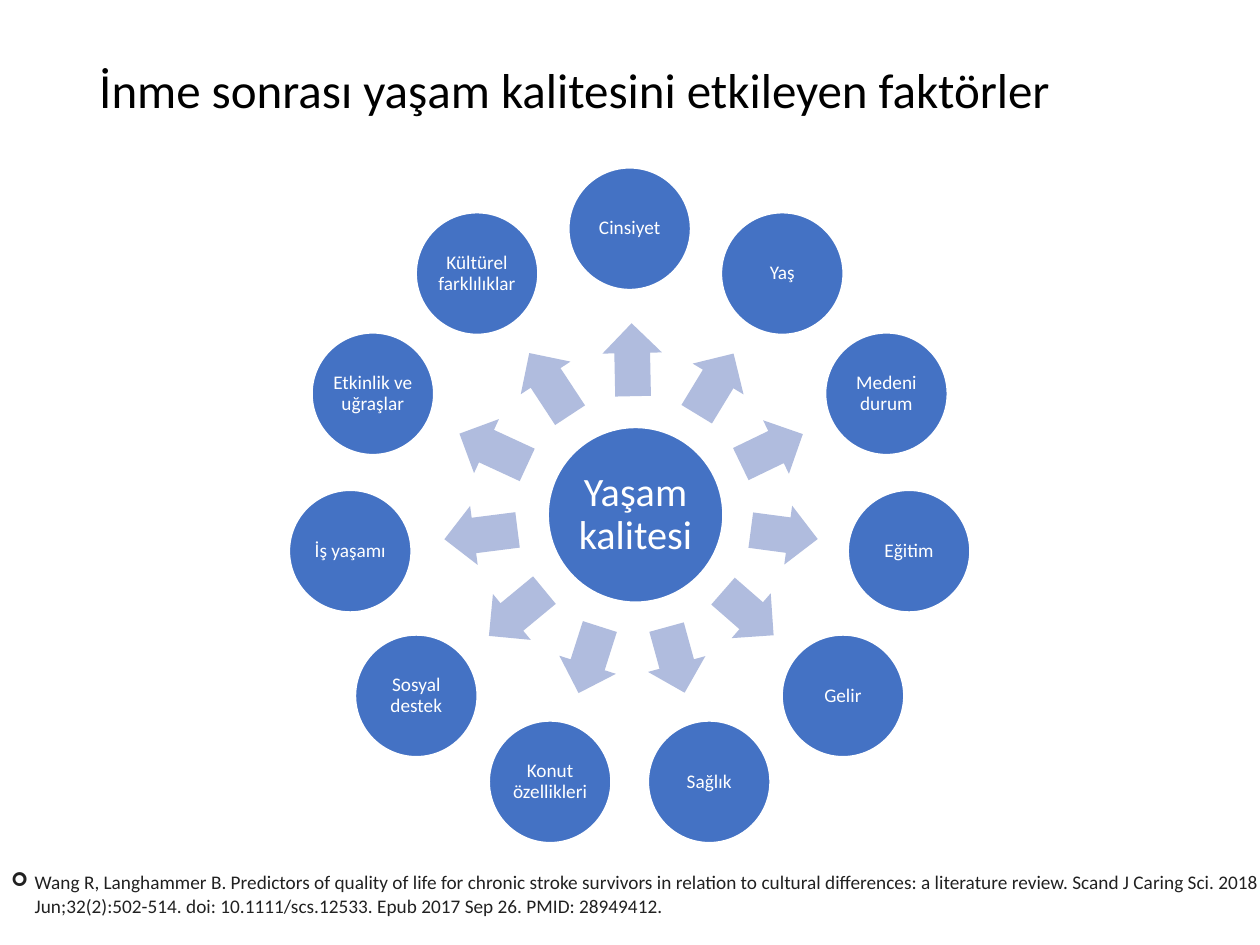
"""Build a slide of the factors around quality of life after stroke."""
import math

import lxml.etree
import pptx
import pptx.dml.color
import pptx.enum.shapes
import pptx.enum.text
import pptx.oxml.ns
import pptx.util

Pt = pptx.util.Pt
SHAPES = pptx.enum.shapes.MSO_SHAPE
ALIGN = pptx.enum.text.PP_ALIGN
ANCHOR = pptx.enum.text.MSO_ANCHOR
COLORS = {
    "black": "000000",
    "white": "FFFFFF",
    "circle": "4472C4",
    "arrow": "B0BCDE",
    "reference": "212121",
}


def write(box, text, size, color, align=ALIGN.LEFT, anchor=ANCHOR.MIDDLE, spacing=0.9, inset=None):
    frame = box.text_frame
    frame.word_wrap = True
    frame.vertical_anchor = anchor
    if inset is not None:
        frame.margin_left = frame.margin_right = Pt(inset)
        frame.margin_top = frame.margin_bottom = Pt(inset)
    para = frame.paragraphs[0]
    para.alignment = align
    para.line_spacing = spacing
    span = para.add_run()
    span.text = text
    span.font.name = "Calibri"
    span.font.size = Pt(size)
    span.font.color.rgb = pptx.dml.color.RGBColor.from_string(COLORS[color])
    return para


def draw(page, kind, center_x, center_y, width, height, fill, outline=None):
    shape = page.shapes.add_shape(
        kind, Pt(center_x - width / 2), Pt(center_y - height / 2), Pt(width), Pt(height)
    )
    shape.shadow.inherit = False
    shape.fill.solid()
    shape.fill.fore_color.rgb = pptx.dml.color.RGBColor.from_string(COLORS[fill])
    if outline:
        shape.line.color.rgb = pptx.dml.color.RGBColor.from_string(COLORS[outline])
        shape.line.width = Pt(1)
    else:
        shape.line.fill.background()
    return shape


deck = pptx.Presentation()
deck.slide_width, deck.slide_height = Pt(720), Pt(540)
page = deck.slides.add_slide(deck.slide_layouts[5])

title = page.shapes.title
title.left, title.top, title.width, title.height = Pt(49.5), Pt(0.7), Pt(621), Pt(104.4)
write(title, "İnme sonrası yaşam kalitesini etkileyen faktörler", 28, "black")

hub_x, hub_y, hub_size = 363.2, 294.2, 100
ring_x, ring_y, ring_radius = 359.8, 292, 161.3
factor_size = 69.7
hub = draw(page, SHAPES.OVAL, hub_x, hub_y, hub_size, hub_size, "circle", "white")
write(hub, "Yaşam kalitesi", 23, "white", align=ALIGN.CENTER, inset=2)

factors = [
    "Cinsiyet", "Yaş", "Medeni durum", "Eğitim", "Gelir", "Sağlık",
    "Konut özellikleri", "Sosyal destek", "İş yaşamı",
    "Etkinlik ve uğraşlar", "Kültürel farklılıklar",
]
for index, factor in enumerate(factors):
    turn = 2 * math.pi * index / len(factors)
    x = ring_x + ring_radius * math.sin(turn)
    y = ring_y - ring_radius * math.cos(turn)

    angle = math.atan2(y - hub_y, x - hub_x)
    gap = math.hypot(x - hub_x, y - hub_y) - (hub_size + factor_size) / 2
    reach = hub_size / 2 + gap / 2 - 0.7
    arrow = draw(
        page, SHAPES.RIGHT_ARROW,
        hub_x + reach * math.cos(angle), hub_y + reach * math.sin(angle),
        0.53 * gap, 34, "arrow",
    )
    arrow.adjustments[0], arrow.adjustments[1] = 0.6, 0.5
    arrow.rotation = math.degrees(angle) % 360

    circle = draw(page, SHAPES.OVAL, x, y, factor_size, factor_size, "circle", "white")
    write(circle, factor, 11, "white", align=ALIGN.CENTER, inset=1.1)

reference = page.shapes.add_textbox(Pt(-0.7), Pt(494), Pt(743.8), Pt(33.8))
para = write(
    reference,
    "Wang R, Langhammer B. Predictors of quality of life for chronic stroke survivors "
    "in relation to cultural differences: a literature review. Scand J Caring Sci. 2018 "
    "Jun;32(2):502-514. doi: 10.1111/scs.12533. Epub 2017 Sep 26. PMID: 28949412.",
    11, "reference", anchor=ANCHOR.TOP, spacing=1.0,
)
reference.text_frame.auto_size = pptx.enum.text.MSO_AUTO_SIZE.SHAPE_TO_FIT_TEXT
properties = para._p.get_or_add_pPr()
properties.set("marL", str(Pt(13.5)))
properties.set("indent", str(-Pt(13.5)))
font = lxml.etree.SubElement(properties, pptx.oxml.ns.qn("a:buFont"))
font.set("typeface", "Wingdings")
bullet = lxml.etree.SubElement(properties, pptx.oxml.ns.qn("a:buChar"))
bullet.set("char", "➢")

deck.save("out.pptx")
